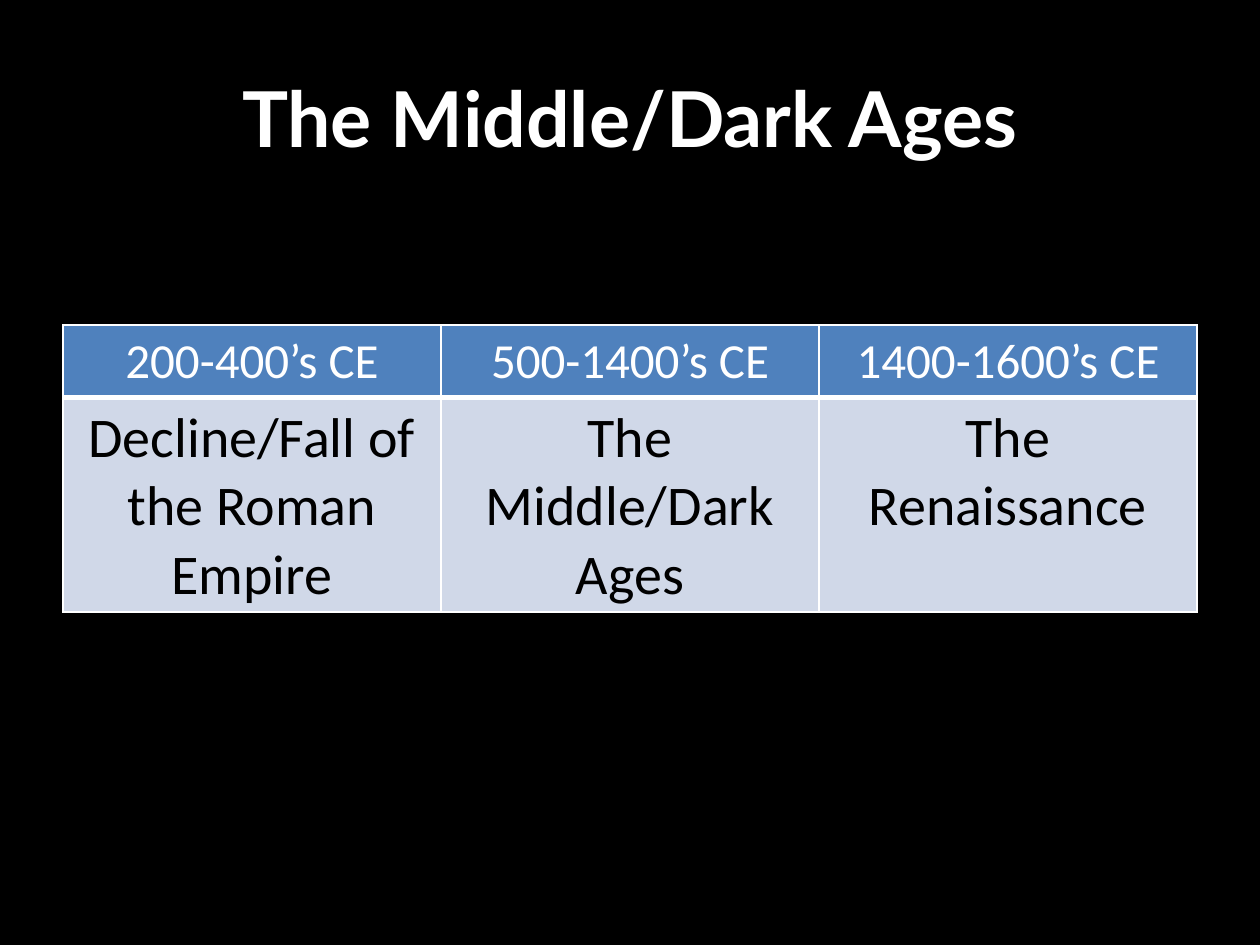
from pptx import Presentation
from pptx.dml.color import RGBColor
from pptx.enum.text import MSO_ANCHOR as Anchor, PP_ALIGN as Align
from pptx.oxml import parse_xml
from pptx.oxml.ns import nsdecls
from pptx.util import Pt

WHITE, BLACK = "FFFFFF", "000000"


def color(hex_string):
    return RGBColor.from_string(hex_string)


def write(frame, text, size, fill, font="Calibri", bold=False):
    para = frame.paragraphs[0]
    para.alignment = Align.CENTER
    span = para.add_run()
    span.text = text
    span.font.size = Pt(size)
    span.font.name = font
    span.font.bold = bold
    span.font.color.rgb = color(fill)


deck = Presentation()
deck.slide_width, deck.slide_height = Pt(720), Pt(540)
slide = deck.slides.add_slide(deck.slide_layouts[6])
slide.background.fill.solid()
slide.background.fill.fore_color.rgb = color(BLACK)

title = slide.shapes.add_textbox(Pt(36), Pt(21.6), Pt(648), Pt(90)).text_frame
title.word_wrap = True
title.vertical_anchor = Anchor.MIDDLE
write(title, "The Middle/Dark Ages", size=44, fill=WHITE, font="Lato", bold=True)

# Each row: height, text size, text colour, fill, top and bottom border, texts
rows = [
    (41.4, 28, WHITE, "4F81BD", 1, 3,
     ["200-400’s CE", "500-1400’s CE", "1400-1600’s CE"]),
    (122, 32, BLACK, "D0D8E8", 3, 1,
     ["Decline/Fall of the Roman Empire", "The Middle/Dark Ages", "The Renaissance"]),
]
timeline = slide.shapes.add_table(
    2, 3, Pt(36), Pt(185.8), Pt(648), Pt(163.4)).table
for column in timeline.columns:
    column.width = Pt(216)

for row, (height, size, ink, fill, top, bottom, texts) in enumerate(rows):
    timeline.rows[row].height = Pt(height)
    for column, text in enumerate(texts):
        cell = timeline.cell(row, column)
        write(cell.text_frame, text, size=size, fill=ink)
        properties = cell._tc.get_or_add_tcPr()
        for side, width in zip("LRTB", (1, 1, top, bottom)):
            properties.append(parse_xml(
                f'<a:ln{side} {nsdecls("a")} w="{Pt(width)}"><a:solidFill>'
                f'<a:srgbClr val="{WHITE}"/></a:solidFill></a:ln{side}>'))
        cell.fill.solid()
        cell.fill.fore_color.rgb = color(fill)

deck.save("out.pptx")
